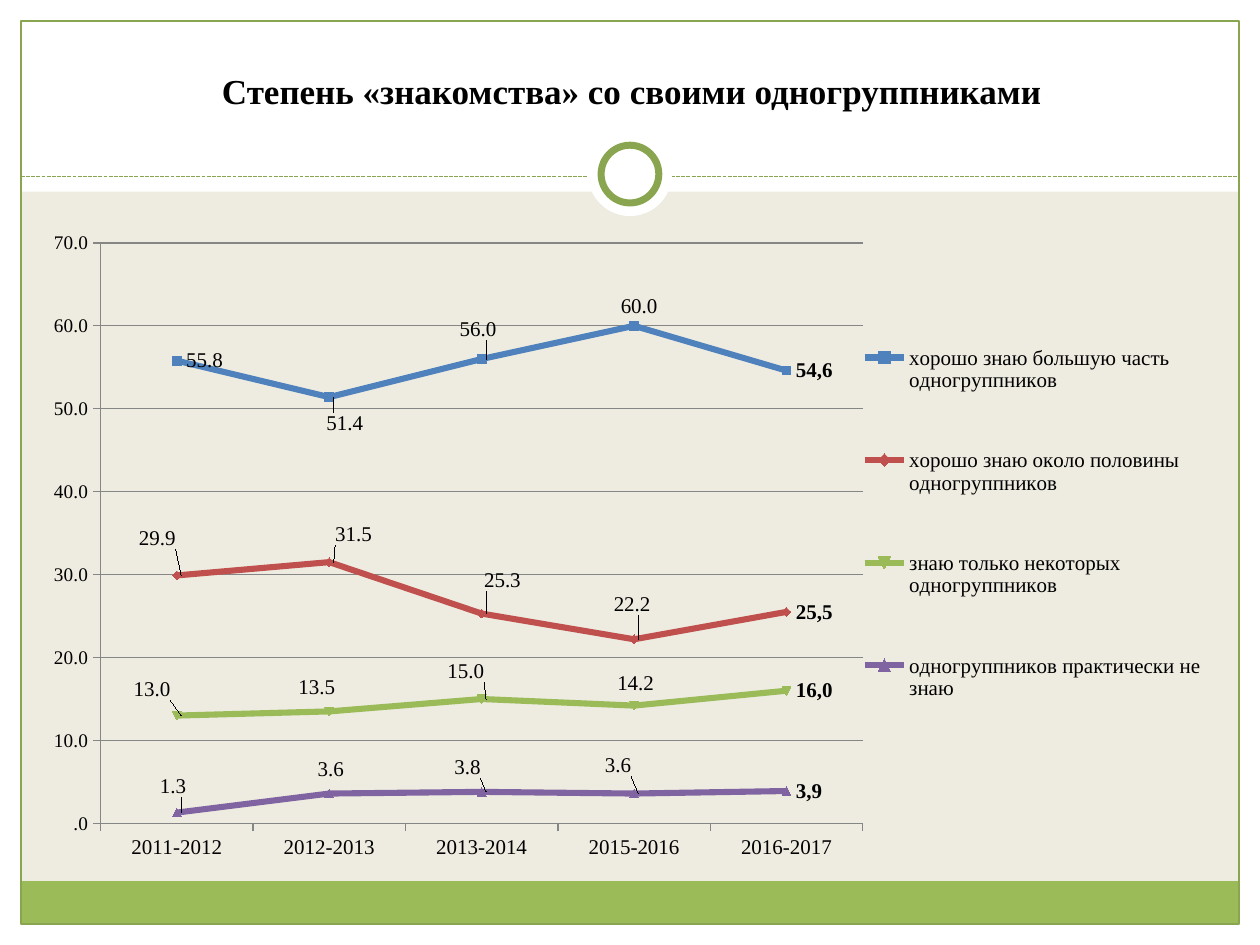
from lxml import etree
from pptx import Presentation
from pptx.chart.data import CategoryChartData
from pptx.dml.color import RGBColor
from pptx.enum.chart import XL_CHART_TYPE, XL_LABEL_POSITION, XL_LEGEND_POSITION, XL_TICK_MARK
from pptx.enum.dml import MSO_LINE
from pptx.enum.shapes import MSO_CONNECTOR, MSO_SHAPE
from pptx.enum.text import MSO_ANCHOR, PP_ALIGN
from pptx.oxml.ns import qn
from pptx.util import Pt

RECTANGLE, OVAL = MSO_SHAPE.RECTANGLE, MSO_SHAPE.OVAL
RIGHT_OF_POINT = XL_LABEL_POSITION.RIGHT
TICK_OUTSIDE = XL_TICK_MARK.OUTSIDE
FONT = "Times New Roman"
COLORS = {
    "background": "EEECE1", "white": "FFFFFF", "band": "9BBB59", "frame": "89A54F",
    "text": "000000", "grid": "868686",
}
YEARS = ["2011-2012", "2012-2013", "2013-2014", "2015-2016", "2016-2017"]
SERIES = [
    ("хорошо знаю большую часть одногруппников", "4F81BD", [55.8, 51.4, 56, 60, 54.6],
     [None, (-7, 15), (-18, -17), (-13, -11)]),
    ("хорошо знаю около половины одногруппников", "C0504D", [29.9, 31.5, 25.3, 22.2, 25.5],
     [(-27, -21), (-2, -16), (-4, -19), (-17, -20)]),
    ("знаю только некоторых одногруппников", "9BBB59", [13, 13.5, 15, 14.2, 16],
     [(-30, -15), (-23, -14), (-25, -16), (-15, -13)]),
    ("одногруппников практически не знаю", "8064A2", [1.3, 3.6, 3.8, 3.6, 3.9],
     [(-15, -15), (-12, -14), (-21, -14), (-22, -16)]),
]


def rgb(name):
    return RGBColor.from_string(COLORS.get(name, name))


def add_box(slide, kind, left, top, width, height, fill=None, line=None, weight=0.75):
    shape = slide.shapes.add_shape(kind, Pt(left), Pt(top), Pt(width), Pt(height))
    shape.shadow.inherit = False
    if fill:
        shape.fill.solid()
        shape.fill.fore_color.rgb = rgb(fill)
    else:
        shape.fill.background()
    if line:
        shape.line.color.rgb = rgb(line)
        shape.line.width = Pt(weight)
    else:
        shape.line.fill.background()


def add_frame(slide, width, height, margin=12, header=109.5, divider=101):
    add_box(slide, RECTANGLE, 0, height - margin, width, margin, "white")
    add_box(slide, RECTANGLE, 0, 0, width, header, "white")
    for left in (0, width - margin):
        add_box(slide, RECTANGLE, left, 0, margin, height, "white")
    inner_width = width - 2 * margin
    add_box(slide, RECTANGLE, margin, height - margin - 24.5, inner_width, 24.5, "band")
    add_box(slide, RECTANGLE, margin, margin, inner_width, height - 2 * margin, line="frame")

    connector = slide.shapes.add_connector(
        MSO_CONNECTOR.STRAIGHT, Pt(margin), Pt(divider), Pt(width - margin), Pt(divider))
    connector.line.color.rgb = rgb("frame")
    connector.line.width = Pt(0.75)
    connector.line.dash_style = MSO_LINE.SQUARE_DOT
    etree.SubElement(connector._element.spPr, qn("a:effectLst"))

    center_x, center_y = width / 2, divider - 1.5
    for diameter, line in ((48, None), (33, "frame")):
        add_box(slide, OVAL, center_x - diameter / 2, center_y - diameter / 2,
                diameter, diameter, "white", line, 4)


def add_title(slide, left, top, width, height):
    box = slide.shapes.add_textbox(Pt(left), Pt(top), Pt(width), Pt(height))
    frame = box.text_frame
    frame.word_wrap = True
    frame.vertical_anchor = MSO_ANCHOR.BOTTOM
    paragraph = frame.paragraphs[0]
    paragraph.text = "Степень «знакомства» со своими одногруппниками"
    paragraph.alignment = PP_ALIGN.CENTER
    set_font(paragraph.font, 20, True)


def set_font(font, size, bold=False):
    font.name = FONT
    font.size = Pt(size)
    font.bold = bold
    font.color.rgb = rgb("text")


def make_layout(**values):
    layout = etree.Element(qn("c:layout"))
    manual = etree.SubElement(layout, qn("c:manualLayout"))
    for name, value in values.items():
        etree.SubElement(manual, qn(f"c:{name}")).set("val", str(value))
    return layout


def replace_layout(parent, layout, previous):
    for old in parent.findall(qn("c:layout")):
        parent.remove(old)
    if previous is None:
        parent.insert(0, layout)
    else:
        previous.addnext(layout)


def style_axis(axis, size):
    set_font(axis.tick_labels.font, size)
    axis.major_tick_mark = TICK_OUTSIDE
    axis.minor_tick_mark = XL_TICK_MARK.NONE
    axis.format.line.color.rgb = rgb("grid")
    axis.format.line.width = Pt(0.75)


def style_series(series, color, values, offsets, width, height):
    series.smooth = False
    series.format.line.color.rgb = rgb(color)
    series.format.line.width = Pt(3.5)
    labels = series.data_labels
    labels.show_value = True
    labels.number_format = "####.0"
    labels.number_format_is_linked = False
    labels.position = RIGHT_OF_POINT
    set_font(labels.font, 12)

    for index, offset in enumerate(offsets):
        if offset:
            label = series.points[index].data_label
            set_font(label.font, 12)
            label.position = RIGHT_OF_POINT
            element = labels._element.xpath(f"c:dLbl[c:idx/@val='{index}']")[0]
            layout = make_layout(x=offset[0] / width, y=offset[1] / height)
            replace_layout(element, layout, element.find(qn("c:idx")))

    last_label = series.points[len(values) - 1].data_label
    paragraph = last_label.text_frame.paragraphs[0]
    run = paragraph.add_run()
    run.text = f"{values[-1]:.1f}".replace(".", ",")
    set_font(run.font, 12, True)
    last_label.position = RIGHT_OF_POINT


def add_line_chart(slide, left, top, width, height):
    data = CategoryChartData(number_format="####.0")
    data.categories = YEARS
    for name, _, values, _ in SERIES:
        data.add_series(name, values)
    chart = slide.shapes.add_chart(
        XL_CHART_TYPE.LINE_MARKERS, Pt(left), Pt(top), Pt(width), Pt(height), data).chart
    chart.has_title = False
    set_font(chart.font, 10)
    plot = chart.plots[0]
    plot.vary_by_categories = False
    for series, (_, color, values, offsets) in zip(plot.series, SERIES):
        style_series(series, color, values, offsets, width, height)

    style_axis(chart.category_axis, 12)
    value_axis = chart.value_axis
    style_axis(value_axis, 11)
    value_axis.minimum_scale, value_axis.maximum_scale, value_axis.major_unit = 0, 70, 10
    value_axis.tick_labels.number_format = "####.0"
    value_axis.tick_labels.number_format_is_linked = False
    value_axis.has_major_gridlines = True
    value_axis.major_gridlines.format.line.color.rgb = rgb("grid")
    value_axis.major_gridlines.format.line.width = Pt(0.75)

    chart.has_legend = True
    legend = chart.legend
    legend.position = XL_LEGEND_POSITION.RIGHT
    legend.include_in_layout = False
    set_font(legend.font, 12)
    legend_element = legend._element
    replace_layout(
        legend_element,
        make_layout(xMode="edge", yMode="edge", x=0.69, y=0.12, w=0.31, h=0.71),
        legend_element.find(qn("c:legendPos")))
    plot_area = chart._chartSpace.chart.plotArea
    replace_layout(
        plot_area,
        make_layout(layoutTarget="inner", xMode="edge", yMode="edge",
                    x=0.05, y=0.05, w=0.65, h=0.88),
        None)


def main():
    presentation = Presentation()
    presentation.slide_width, presentation.slide_height = Pt(720), Pt(540)
    slide = presentation.slides.add_slide(presentation.slide_layouts[6])
    slide.background.fill.solid()
    slide.background.fill.fore_color.rgb = rgb("background")
    add_frame(slide, 720, 540)
    add_title(slide, 25, 21, 672, 46)
    add_line_chart(slide, 24, 120, 670, 377)
    presentation.save("out.pptx")


if __name__ == "__main__":
    main()
